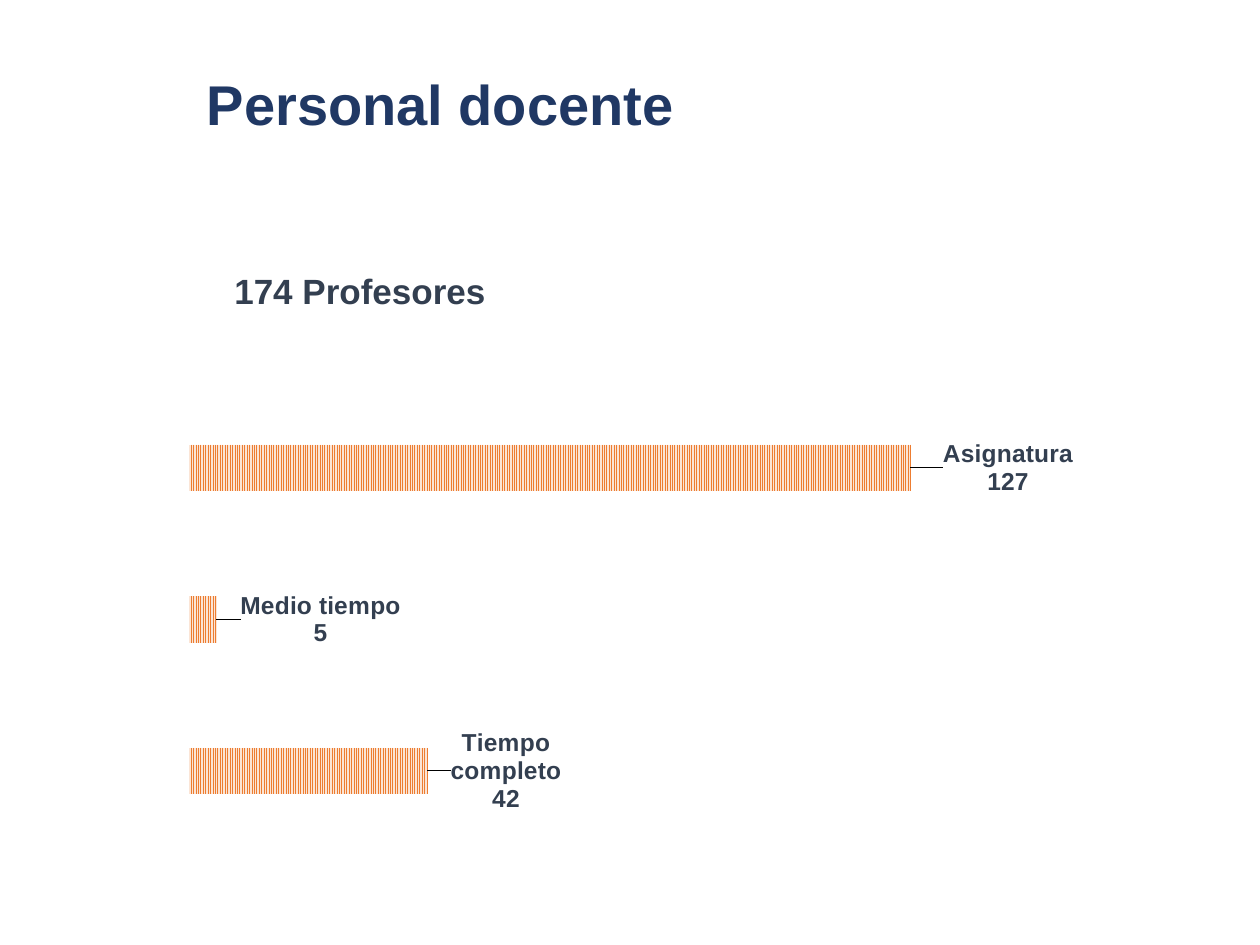
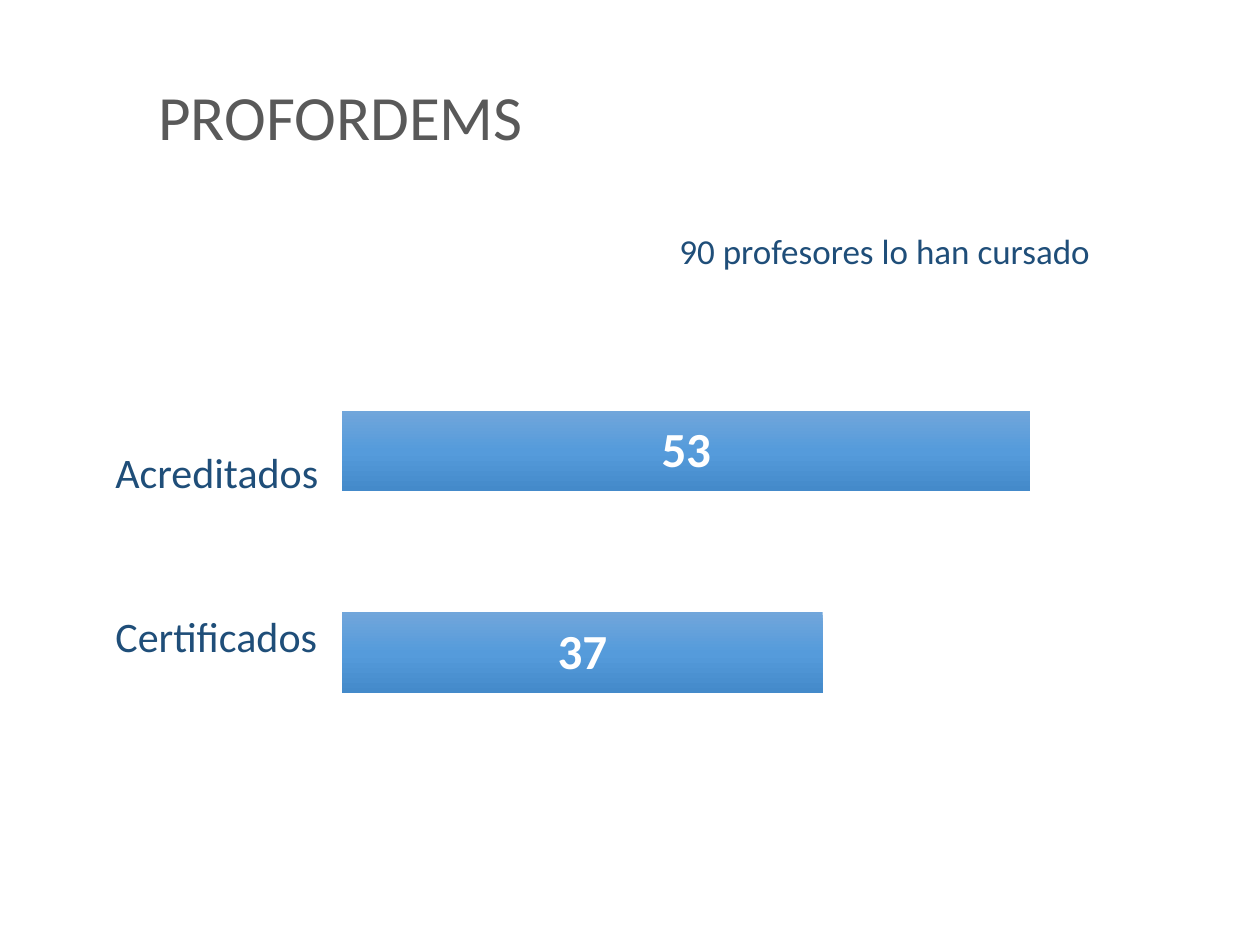
from copy import deepcopy

from lxml.etree import SubElement
from pptx import Presentation
from pptx.chart.data import CategoryChartData
from pptx.dml.color import RGBColor
from pptx.enum.chart import XL_CHART_TYPE as CT, XL_LABEL_POSITION as LP
from pptx.enum.dml import MSO_PATTERN
from pptx.enum.text import MSO_AUTO_SIZE, PP_ALIGN
from pptx.oxml import parse_xml
from pptx.oxml.ns import nsdecls, qn
from pptx.util import Emu, Pt

# Shared look
SCALE = 914400 / 126
NAVY, SLATE, BLUE, GREY, WHITE = "203864", "333F50", "1F4E79", "595959", "FFFFFF"
ORANGE, PEACH = "ED7D31", "FBE5D6"
GRADIENT = [(0, "71A6DB"), (0.5, "559BDB"), (1, "448ACA")]

# Texts: words, box in px, format
STAFF_TEXTS = [
    ("Personal docente", (110, 63, 661, 81),
     dict(size=32, color=NAVY, font="Arial", bold=True, align=PP_ALIGN.CENTER)),
    ("174 Profesores", (212, 263, 296, 55),
     dict(size=20, color=SLATE, font="Arial", bold=True, align=PP_ALIGN.CENTER)),
]
COURSE_TEXTS = [
    ("PROFORDEMS", (146, 71, 484, 89), dict(size=36, color=GREY)),
    ("90 profesores lo han cursado", (667, 223, 484, 55), dict(size=20, color=BLUE)),
    ("Acreditados", (103, 440, 238, 63), dict(size=24, color=BLUE)),
    ("Certificados", (103, 604, 271, 63), dict(size=24, color=BLUE)),
]

# Charts: box and inner plot area in px
STAFF_CHART = dict(
    data=[("Tiempo completo", 42), ("Medio tiempo", 5), ("Asignatura", 127)],
    kind=CT.BAR_CLUSTERED, box=(173, 369, 920, 524), plot_box=(16, 23, 796, 455),
    top=140, gap=227, overlap=-48)
COURSE_CHART = dict(
    data=[("1", 37), ("2", 53)],
    kind=CT.BAR_STACKED, box=(325, 340, 811, 422), plot_box=(17, 10, 779, 404),
    top=60, gap=150, overlap=100)
LABEL_SHIFTS = [0.02, 0.02, 0.03]


def px(*lengths):
    return [Emu(round(n * SCALE)) for n in lengths]


def rgb(value):
    return RGBColor.from_string(value)


def style(font, size, color, name="Calibri", bold=False):
    font.size, font.name, font.bold = Pt(size), name, bold
    font.color.rgb = rgb(color)


def add_text(slide, text, box, size, color, font="Calibri", bold=False,
             align=PP_ALIGN.LEFT):
    tf = slide.shapes.add_textbox(*px(*box)).text_frame
    tf.word_wrap = True
    tf.auto_size = MSO_AUTO_SIZE.SHAPE_TO_FIT_TEXT
    p = tf.paragraphs[0]
    p.alignment = align
    r = p.add_run()
    r.text = text
    style(r.font, size, color, font, bold)


def layout_xml(values, inner=False):
    """Manual chart layout from fractions of the chart size."""
    target = '<c:layoutTarget val="inner"/>' if inner else ""
    modes = '<c:xMode val="edge"/><c:yMode val="edge"/>' if inner else ""
    parts = "".join(f'<c:{k} val="{v:.3f}"/>' for k, v in zip("xywh", values))
    return parse_xml(f'<c:layout {nsdecls("c")}><c:manualLayout>'
                     f'{target}{modes}{parts}</c:manualLayout></c:layout>')


def add_bars(slide, data, kind, box, plot_box, top, gap, overlap):
    cd = CategoryChartData()
    cd.categories = [name for name, _ in data]
    cd.add_series("Series 1", [value for _, value in data])
    chart = slide.shapes.add_chart(kind, *px(*box), cd).chart
    chart.has_legend = chart.has_title = False
    style(chart.font, 10, "000000")
    for axis in (chart.category_axis, chart.value_axis):
        axis.has_major_gridlines = False
        axis.visible = False
    chart.value_axis.minimum_scale, chart.value_axis.maximum_scale = 0, top

    plot = chart.plots[0]
    plot.vary_by_categories = False
    plot.gap_width, plot.overlap = gap, overlap
    area = chart._chartSpace.chart.plotArea
    for old in area.findall(qn("c:layout")):
        area.remove(old)
    fractions = [n / box[2 + i % 2] for i, n in enumerate(plot_box)]
    area.insert(0, layout_xml(fractions, inner=True))
    return plot.series[0]


def label_with_category(ser, shifts):
    """Name and value on separate lines, just past the end of each bar."""
    for i, shift in enumerate(shifts):
        label = ser.points[i].data_label
        style(label.font, 14, SLATE, "Arial", True)
        label.position = LP.OUTSIDE_END
    for el, shift in zip(ser._element.iter(qn("c:dLbl")), shifts):
        el.find(qn("c:idx")).addnext(layout_xml((shift, 0)))
        el.find(".//" + qn("a:bodyPr")).set("wrap", "square")
        el.find(qn("c:showCatName")).set("val", "1")
        SubElement(el, qn("c:separator")).text = "\n"


def fill_gradient(ser, stops):
    fill = ser.format.fill
    fill.gradient()
    fill.gradient_angle = 270
    gs_list = ser._element.find(".//" + qn("a:gsLst"))
    gs_list.insert(1, deepcopy(gs_list[0]))
    for stop, (position, color) in zip(fill.gradient_stops, stops):
        stop.position = position
        stop.color.rgb = rgb(color)


def add_slide(prs, texts, chart):
    slide = prs.slides.add_slide(prs.slide_layouts[6])
    ser = add_bars(slide, **chart)
    for text, box, fmt in texts:
        add_text(slide, text, box, **fmt)
    return ser


def main():
    prs = Presentation()
    prs.slide_width, prs.slide_height = px(1260, 945)

    # Teaching staff
    ser = add_slide(prs, STAFF_TEXTS, STAFF_CHART)
    fill = ser.format.fill
    fill.patterned()
    fill.pattern = MSO_PATTERN.NARROW_VERTICAL
    fill.fore_color.rgb, fill.back_color.rgb = rgb(ORANGE), rgb(PEACH)
    label_with_category(ser, LABEL_SHIFTS)

    # Course results
    ser = add_slide(prs, COURSE_TEXTS, COURSE_CHART)
    fill_gradient(ser, GRADIENT)
    labels = ser.data_labels
    labels.show_value = True
    labels.position = LP.CENTER
    style(labels.font, 28, WHITE, bold=True)

    prs.save("out.pptx")


if __name__ == "__main__":
    main()
